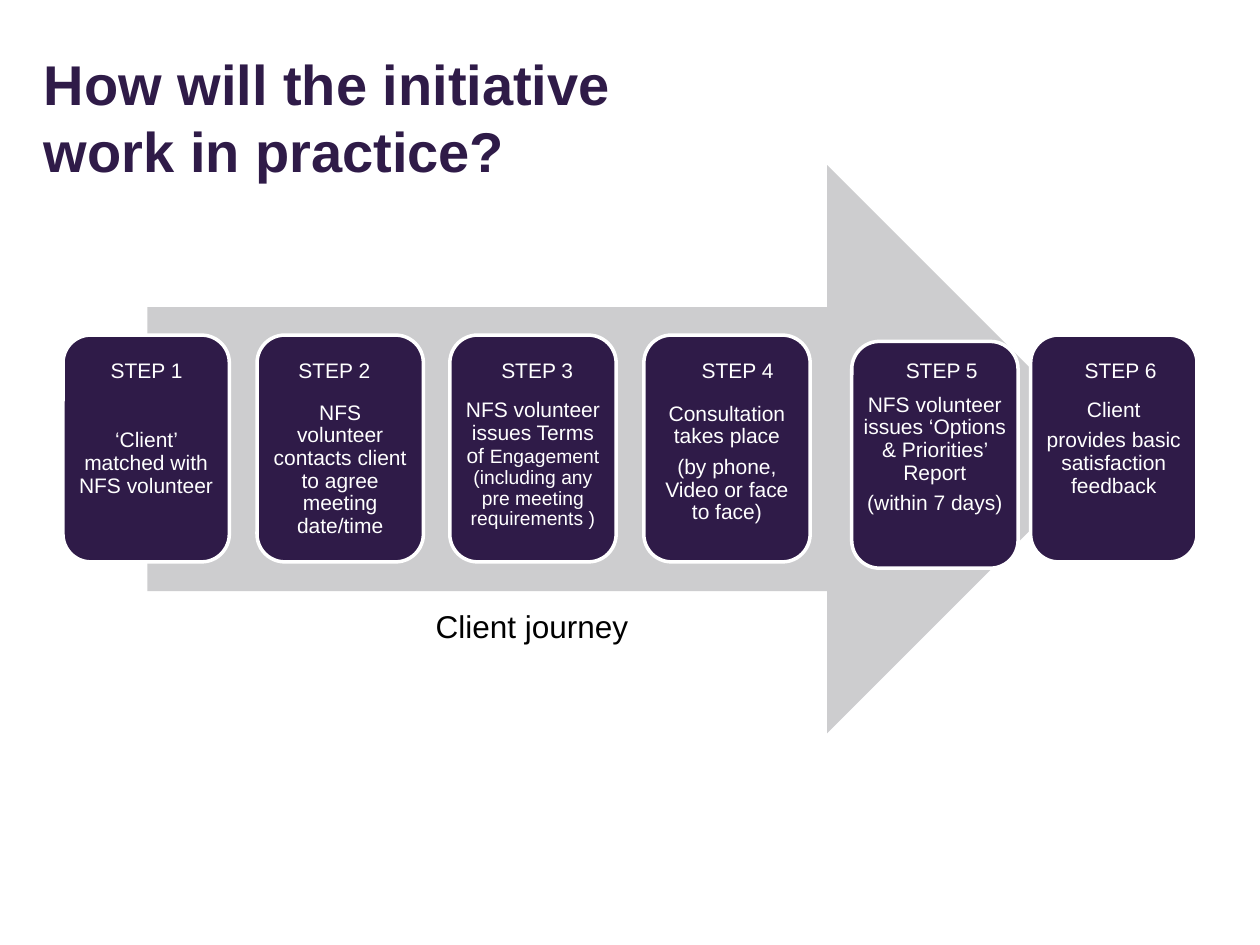
import pptx
import pptx.util
import pptx.dml.color
import pptx.enum.shapes
import pptx.enum.text

Inches, Pt = pptx.util.Inches, pptx.util.Pt
RGB = pptx.dml.color.RGBColor
SHAPE = pptx.enum.shapes.MSO_SHAPE
ALIGN = pptx.enum.text.PP_ALIGN
MIDDLE = pptx.enum.text.MSO_ANCHOR.MIDDLE

PLUM = RGB(0x2F, 0x1B, 0x48)
GREY = RGB(0xCD, 0xCD, 0xCF)
WHITE = RGB(0xFF, 0xFF, 0xFF)
BLACK = RGB(0, 0, 0)

# Card left, card top, label left, side inset, top inset, paragraphs of runs (text, size)
STEPS = [
    (0.5, 2.66, 0.78, 0.05, 0.29,
     [[("‘Client’ matched with NFS volunteer", 12)]]),
    (2.04, 2.66, 2.27, 0.05, 0.39,
     [[("NFS\vvolunteer contacts client to agree meeting date/time", 12)]]),
    (3.57, 2.66, 3.88, 0.05, 0.31,
     [[("NFS volunteer issues Terms of ", 12),
       ("Engagement (including any pre meeting requirements )", 11)]]),
    (5.11, 2.66, 5.47, 0.05, 0.29,
     [[("Consultation takes place", 12)],
      [("(by phone, Video or face to face)", 12)]]),
    (6.76, 2.71, 7.09, 0.01, 0.05,
     [[("NFS volunteer issues ‘Options & Priorities’ Report", 12)],
      [("(within 7 days)", 12)]]),
    (8.18, 2.66, 8.51, 0.05, 0.05,
     [[("Client", 12)],
      [("provides basic satisfaction feedback", 12)]]),
]


def style(run, size, color, bold=False):
    font = run.font
    font.name, font.size, font.bold = "Arial", Pt(size), bold
    font.color.rgb = color


def add_block(slide, kind, left, top, width, height, fill):
    block = slide.shapes.add_shape(
        kind, Inches(left), Inches(top), Inches(width), Inches(height))
    block.shadow.inherit = False
    block.fill.solid()
    block.fill.fore_color.rgb = fill
    block.line.fill.background()
    return block


def add_text(slide, text, left, top, width, height, size, color, bold=False):
    box = slide.shapes.add_textbox(
        Inches(left), Inches(top), Inches(width), Inches(height))
    frame = box.text_frame
    frame.word_wrap = True
    frame.vertical_anchor = MIDDLE
    frame.text = text
    for run in frame.paragraphs[0].runs:
        style(run, size, color, bold)


def add_card(slide, left, top, side, head, paras):
    """Add a step card; head is the top inset that clears the step label."""
    card = add_block(slide, SHAPE.ROUNDED_RECTANGLE, left, top, 1.32, 1.8, PLUM)
    card.line.color.rgb = WHITE
    card.line.width = Pt(2)
    frame = card.text_frame
    frame.word_wrap = True
    frame.vertical_anchor = MIDDLE
    frame.margin_left = frame.margin_right = Inches(side)
    frame.margin_top, frame.margin_bottom = Inches(head), Inches(0.05)
    for index, parts in enumerate(paras):
        para = frame.add_paragraph() if index else frame.paragraphs[0]
        para.alignment = ALIGN.CENTER
        para.line_spacing = 0.9
        para.space_after = Pt(4.5)
        for text, size in parts:
            start = len(para.runs)
            if "\v" in text:
                para.text = text
            else:
                para.add_run().text = text
            for run in para.runs[start:]:
                style(run, size, WHITE)


def add_label(slide, left, text):
    label = add_block(slide, SHAPE.RECTANGLE, left, 2.79, 0.78, 0.3, PLUM)
    frame = label.text_frame
    frame.word_wrap = False
    frame.vertical_anchor = MIDDLE
    frame.text = text
    para = frame.paragraphs[0]
    para.alignment = ALIGN.LEFT
    style(para.runs[0], 12, WHITE)


def main():
    deck = pptx.Presentation()
    deck.slide_width, deck.slide_height = Inches(10), Inches(7.5)
    slide = deck.slides.add_slide(deck.slide_layouts[6])
    add_text(slide, "How will the initiative\vwork in practice?",
             0.25, 0.3, 6.98, 1.25, 32, PLUM, True)
    add_block(slide, SHAPE.RIGHT_ARROW, 1.17, 1.31, 7.65, 4.51, GREY)
    for left, top, _, side, head, paras in STEPS:
        add_card(slide, left, top, side, head, paras)
    add_text(slide, "Client journey", 3.36, 4.77, 3.19, 0.4, 18, BLACK)
    for number, step in enumerate(STEPS, 1):
        add_label(slide, step[2], f"STEP {number}")
    deck.save("out.pptx")


if __name__ == "__main__":
    main()
